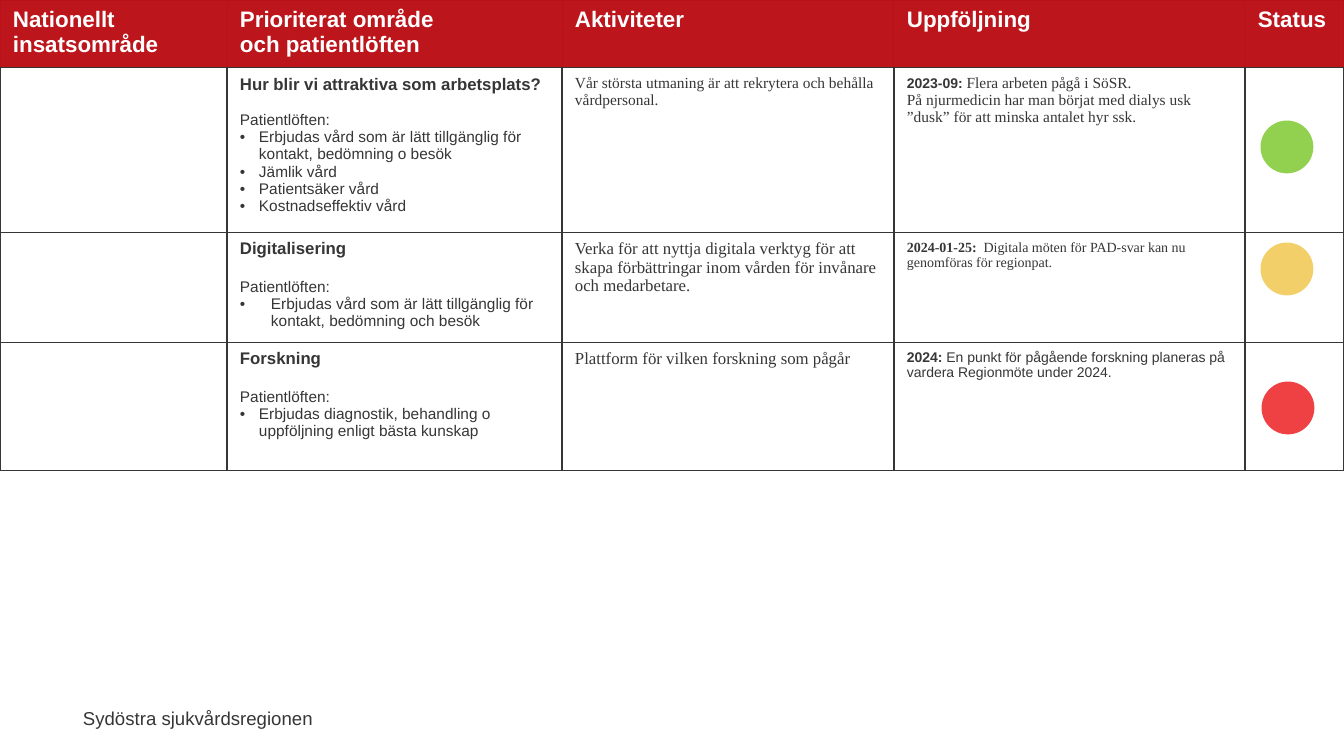
from dataclasses import dataclass

from lxml.etree import SubElement
from pptx import Presentation
from pptx.dml.color import RGBColor
from pptx.enum.shapes import MSO_SHAPE
from pptx.enum.text import PP_ALIGN
from pptx.oxml.ns import qn
from pptx.util import Pt

EMU_PER_PX = 12192000 / 1344


@dataclass(frozen=True)
class Theme:
    sans: str = "Arial"
    serif: str = "Times New Roman"
    ink: str = "363636"
    white: str = "FFFFFF"
    header_fill: str = "BC161C"
    header_edge: str = "BC1018"
    green: str = "92D050"
    yellow: str = "F2CF68"
    red: str = "EF4044"
    header_size: float = 16
    footer_size: float = 13.3
    heading_size: float = 12
    body_size: float = 11
    note_size: float = 10


@dataclass(frozen=True)
class Span:
    text: str
    size: float
    font: str = "Arial"
    bold: bool = False
    color: str = "363636"


@dataclass(frozen=True)
class Para:
    spans: tuple
    gap: int = 0
    bullet_indent: int = 0


THEME = Theme()
COLUMN_WIDTHS = (227, 335, 332, 351, 99)
ROW_HEIGHTS = (67, 165, 110, 128)
HEADERS = ("Nationellt insatsområde", "Prioriterat område \voch patientlöften",
           "Aktiviteter", "Uppföljning", "Status")
STATUS_MARKS = ((1262, 122, THEME.green), (1263, 383, THEME.red),
                (1262, 244, THEME.yellow))


def px(length):
    return round(length * EMU_PER_PX)


def plain(text, size, font=THEME.sans):
    return Para((Span(text, size, font),))


def dated(date, text, size=THEME.note_size, font=THEME.sans, date_font=THEME.sans):
    return Para((Span(date, THEME.note_size, date_font, bold=True), Span(text, size, font)))


def priority(heading, promises, gap, indent=19):
    """Bold heading, the promise label and its bullet list."""
    size = THEME.body_size
    return [Para((Span(heading, THEME.heading_size, bold=True),)),
            Para((Span("Patientlöften:", size),), gap=gap),
            *(Para((Span(promise, size),), bullet_indent=indent) for promise in promises)]


def body_rows():
    serif, size = THEME.serif, THEME.body_size
    return (
        (priority("Hur blir vi attraktiva som arbetsplats?",
                  ("Erbjudas vård som är lätt tillgänglig för kontakt, bedömning o besök",
                   "Jämlik vård", "Patientsäker vård", "Kostnadseffektiv vård"), gap=13),
         [plain("Vår största utmaning är att rekrytera och behålla vårdpersonal.", size, serif)],
         [dated("2023-09: ", "Flera arbeten pågå i SöSR.", size, serif),
          plain("På njurmedicin har man börjat med dialys usk ”dusk” för att minska "
                "antalet hyr ssk.", size, serif)]),
        (priority("Digitalisering",
                  ("Erbjudas vård som är lätt tillgänglig för kontakt, bedömning och besök",),
                  gap=14, indent=31),
         [plain("Verka för att nyttja digitala verktyg för att skapa förbättringar inom "
                "vården för invånare och medarbetare.", THEME.heading_size, serif)],
         [dated("2024-01-25: ", " Digitala möten för PAD-svar kan nu genomföras för "
                "regionpat.", font=serif, date_font=serif)]),
        (priority("Forskning",
                  ("Erbjudas diagnostik, behandling o uppföljning enligt bästa kunskap",),
                  gap=14),
         [plain("Plattform för vilken forskning som pågår", THEME.heading_size, serif)],
         [dated("2024: ", "En punkt för pågående forskning planeras på vardera "
                "Regionmöte under 2024.")]),
    )


def format_run(run, span):
    run.font.size = Pt(span.size)
    run.font.name = span.font
    run.font.bold = span.bold
    run.font.color.rgb = RGBColor.from_string(span.color)


def add_bullet(paragraph, indent):
    properties = paragraph._p.get_or_add_pPr()
    properties.set("marL", str(px(indent)))
    properties.set("indent", str(-px(indent)))
    SubElement(properties, qn("a:buFont"), typeface=THEME.sans)
    SubElement(properties, qn("a:buChar"), char="•")


def write_paragraphs(frame, paras):
    for index, para in enumerate(paras):
        paragraph = frame.add_paragraph() if index else frame.paragraphs[0]
        if para.bullet_indent:
            add_bullet(paragraph, para.bullet_indent)
        if para.gap:
            paragraph.space_before = Pt(para.gap)
        for span in para.spans:
            if len(para.spans) == 1:
                paragraph.text = span.text
                runs = paragraph.runs
            else:
                runs = [paragraph.add_run()]
                runs[0].text = span.text
            for run in runs:
                format_run(run, span)
        for line_break in paragraph._p.findall(qn("a:br")):
            SubElement(line_break, qn("a:rPr"), sz=str(int(para.spans[0].size * 100)))


def style_cell(cell, is_header):
    """Set margins, borders and fill; borders must precede the fill in the XML."""
    cell.margin_left = cell.margin_right = px(13)
    cell.margin_top = cell.margin_bottom = px(7)
    for side in "LRTB":
        red_edge = is_header and side != "B"
        width = Pt(0.75 if red_edge else 1)
        line = SubElement(cell._tc.get_or_add_tcPr(), qn(f"a:ln{side}"), w=str(width))
        fill = SubElement(line, qn("a:solidFill"))
        SubElement(fill, qn("a:srgbClr"), val=THEME.header_edge if red_edge else THEME.ink)
    if is_header:
        cell.fill.solid()
        cell.fill.fore_color.rgb = RGBColor.from_string(THEME.header_fill)
    else:
        cell.fill.background()


def add_plan_table(page):
    frame = page.shapes.add_table(len(ROW_HEIGHTS), len(COLUMN_WIDTHS), 0, 0,
                                  px(sum(COLUMN_WIDTHS)), px(sum(ROW_HEIGHTS)))
    table = frame.table
    table.horz_banding = False
    for column, width in zip(table.columns, COLUMN_WIDTHS):
        column.width = px(width)
    for index, (row, height) in enumerate(zip(table.rows, ROW_HEIGHTS)):
        row.height = px(height)
        for cell in row.cells:
            style_cell(cell, is_header=index == 0)
    for column, title in enumerate(HEADERS):
        span = Span(title, THEME.header_size, bold=True, color=THEME.white)
        write_paragraphs(table.cell(0, column).text_frame, [Para((span,))])
    for row, contents in enumerate(body_rows(), start=1):
        for column, paras in enumerate(contents, start=1):
            write_paragraphs(table.cell(row, column).text_frame, paras)


def add_status_mark(page, left, top, color):
    mark = page.shapes.add_shape(MSO_SHAPE.FLOWCHART_CONNECTOR,
                                 px(left), px(top), px(50), px(50))
    mark.shadow.inherit = False
    mark.fill.solid()
    mark.fill.fore_color.rgb = RGBColor.from_string(color)
    mark.line.color.rgb = RGBColor.from_string(color)
    mark.line.width = Pt(2)


def add_footer(page, text):
    box = page.shapes.add_textbox(px(71), px(702), px(252), px(33))
    box.text_frame.word_wrap = False
    write_paragraphs(box.text_frame, [plain(text, THEME.footer_size)])
    box.text_frame.paragraphs[0].alignment = PP_ALIGN.RIGHT


def main():
    deck = Presentation()
    deck.slide_width, deck.slide_height = px(1344), px(756)
    page = deck.slides.add_slide(deck.slide_layouts[6])
    add_footer(page, "Sydöstra sjukvårdsregionen")
    add_plan_table(page)
    for left, top, color in STATUS_MARKS:
        add_status_mark(page, left, top, color)
    deck.save("out.pptx")


if __name__ == "__main__":
    main()
